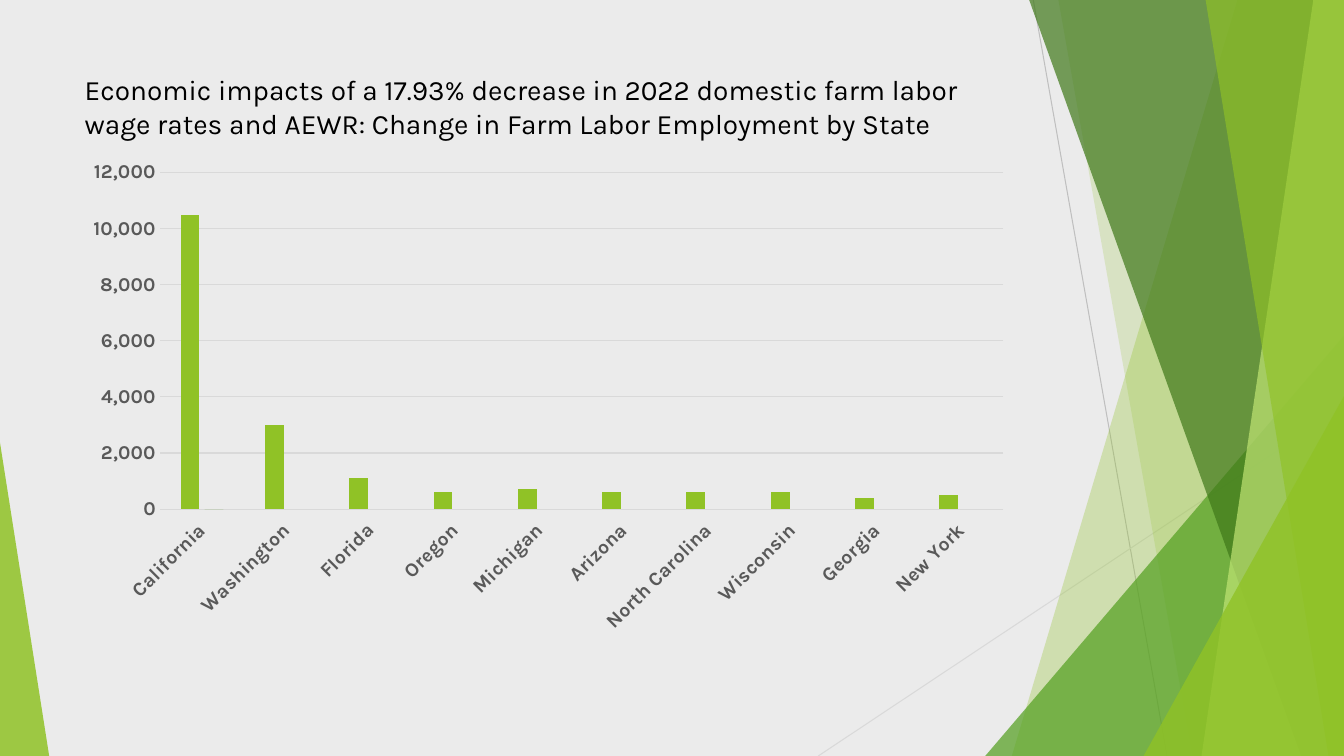
import pptx
import pptx.chart.data
import pptx.dml.color
import pptx.enum.chart
import pptx.enum.shapes
import pptx.enum.text
import pptx.oxml
import pptx.oxml.ns
import pptx.util
from lxml import etree

Cm, Pt = pptx.util.Cm, pptx.util.Pt
qn = pptx.oxml.ns.qn
WIDTH, HEIGHT, TOP = 33.87, 19.05, -0.02


def colour(value):
    return pptx.dml.color.RGBColor.from_string(value)


def paint(facet, value, opacity):
    facet.shadow.inherit = False
    facet.line.fill.background()
    facet.fill.solid()
    facet.fill.fore_color.rgb = colour(value)
    tint = facet.fill._xPr.find(qn("a:solidFill"))[0]
    etree.SubElement(tint, qn("a:alpha")).set("val", str(opacity * 1000))


deck = pptx.Presentation()
deck.slide_width, deck.slide_height = Cm(WIDTH), Cm(HEIGHT)
slide = deck.slides.add_slide(deck.slide_layouts[5])
slide.background.fill.solid()
slide.background.fill.fore_color.rgb = colour("EBEBEB")

rays = [
    (26.04, 0, 29.41, HEIGHT, "BFBFBF"),
    (WIDTH, 10.24, 20.62, HEIGHT, "D9D9D9"),
]
for x1, y1, x2, y2, shade in rays:
    ray = slide.shapes.add_connector(
        pptx.enum.shapes.MSO_CONNECTOR.STRAIGHT, Cm(x1), Cm(y1), Cm(x2), Cm(y2))
    ray.line.color.rgb = colour(shade)
    ray.line.width = Pt(0.75)
    etree.SubElement(ray._element.spPr, qn("a:effectLst"))

facets = [
    ("band", 31.19, 25.5, "90C226", 30),
    ("band", 26.67, 30.05, "90C226", 20),
    ("right corner", 9.04, 10.59, "54A021", 72),
    ("band", 25.93, 32.79, "3F7819", 70),
    ("band", 33.1, 30.28, "C0E474", 70),
    ("band", 30.38, 33.48, "90C226", 65),
    ("right corner", 5.05, 9.07, "90C226", 80),
    ("left corner", 1.24, 7.9, "90C226", 85),
]
for kind, first, second, shade, opacity in facets:
    if kind == "band":
        outline = slide.shapes.build_freeform(Cm(first), Cm(TOP))
        outline.add_line_segments([
            (Cm(WIDTH), Cm(TOP)), (Cm(WIDTH), Cm(HEIGHT)), (Cm(second), Cm(HEIGHT))])
        facet = outline.convert_to_shape()
    else:
        at_right = kind == "right corner"
        facet = slide.shapes.add_shape(
            pptx.enum.shapes.MSO_SHAPE.ISOSCELES_TRIANGLE,
            Cm(WIDTH - first if at_right else 0), Cm(HEIGHT - second),
            Cm(first), Cm(second))
        facet.adjustments[0] = 1 if at_right else 0
    paint(facet, shade, opacity)

heading = slide.shapes.title
heading_place = {"left": Cm(1.88), "top": Cm(1.7), "width": Cm(23.88), "height": Cm(2.16)}
for name, value in heading_place.items():
    setattr(heading, name, value)
heading_frame = {
    "text": "Economic impacts of a 17.93% decrease in 2022 domestic farm labor "
            "wage rates and AEWR: Change in Farm Labor Employment by State",
    "word_wrap": True,
    "auto_size": pptx.enum.text.MSO_AUTO_SIZE.NONE,
    "vertical_anchor": pptx.enum.text.MSO_ANCHOR.TOP,
}
for name, value in heading_frame.items():
    setattr(heading.text_frame, name, value)
heading_line = heading.text_frame.paragraphs[0]
heading_line.alignment = pptx.enum.text.PP_ALIGN.LEFT
heading_font = heading_line.runs[0].font
for name, value in {"name": "Karla", "size": Pt(20), "bold": False}.items():
    setattr(heading_font, name, value)
heading_font.color.rgb = colour("000000")

employment = {
    "California": (10500, 0),
    "Washington": (3000, None),
    "Florida": (1100, None),
    "Oregon": (600, None),
    "Michigan": (700, None),
    "Arizona": (600, None),
    "North Carolina": (600, None),
    "Wisconsin": (600, None),
    "Georgia": (400, None),
    "New York": (500, None),
}
changes = pptx.chart.data.CategoryChartData(number_format="#,##0")
changes.categories = list(employment)
for number, values in enumerate(zip(*employment.values()), 1):
    changes.add_series(f"Series {number}", values)
chart = slide.shapes.add_chart(
    pptx.enum.chart.XL_CHART_TYPE.COLUMN_CLUSTERED,
    Cm(1.88), Cm(3.86), Cm(23.88), Cm(12.29), changes).chart
chart.has_title = False
chart.has_legend = False
chart.font.name = "Karla"
chart.font.size = Pt(10)
chart.font.color.rgb = colour("000000")

columns = chart.plots[0]
for name, value in {"gap_width": 219, "overlap": -27, "vary_by_categories": False}.items():
    setattr(columns, name, value)
for series, shade in zip(columns.series, ("90C226", "54A021")):
    series.invert_if_negative = False
    series.format.fill.solid()
    series.format.fill.fore_color.rgb = colour(shade)

states, jobs = chart.category_axis, chart.value_axis
for axis in (states, jobs):
    axis.major_tick_mark = axis.minor_tick_mark = pptx.enum.chart.XL_TICK_MARK.NONE
    labels = axis.tick_labels.font
    for name, value in {"name": "Karla", "size": Pt(14), "bold": True}.items():
        setattr(labels, name, value)
    labels.color.rgb = colour("595959")
states.tick_label_position = pptx.enum.chart.XL_TICK_LABEL_POSITION.LOW
states._element.find(qn("c:txPr")).find(qn("a:bodyPr")).set("rot", "-2700000")
for name, value in {"minimum_scale": 0, "maximum_scale": 12000, "major_unit": 2000}.items():
    setattr(jobs, name, value)
jobs.tick_labels.number_format = "#,##0"
jobs.tick_labels.number_format_is_linked = False
jobs.format.line.fill.background()
for rule in (states.format.line, jobs.major_gridlines.format.line):
    rule.color.rgb = colour("D9D9D9")
    rule.width = Pt(0.75)

plot_area = chart._chartSpace.chart.plotArea
for former in plot_area.findall(qn("c:layout")):
    plot_area.remove(former)
layout = etree.Element(qn("c:layout"))
plot_area.insert(0, layout)
manual = etree.SubElement(layout, qn("c:manualLayout"))
placement = {"layoutTarget": "inner", "xMode": "edge", "yMode": "edge",
             "x": 0.09, "y": 0.04, "w": 0.89, "h": 0.69}
for name, value in placement.items():
    etree.SubElement(manual, qn(f"c:{name}")).set("val", str(value))

deck.save("out.pptx")
